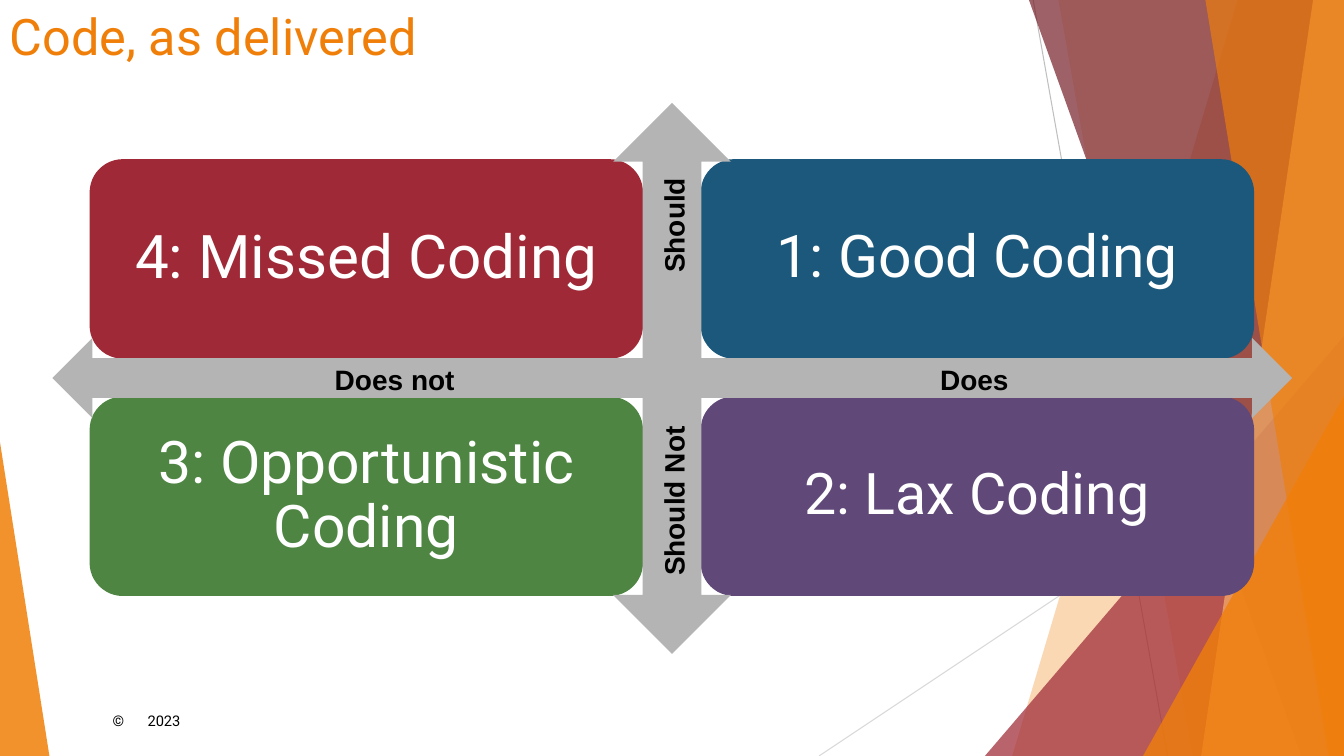
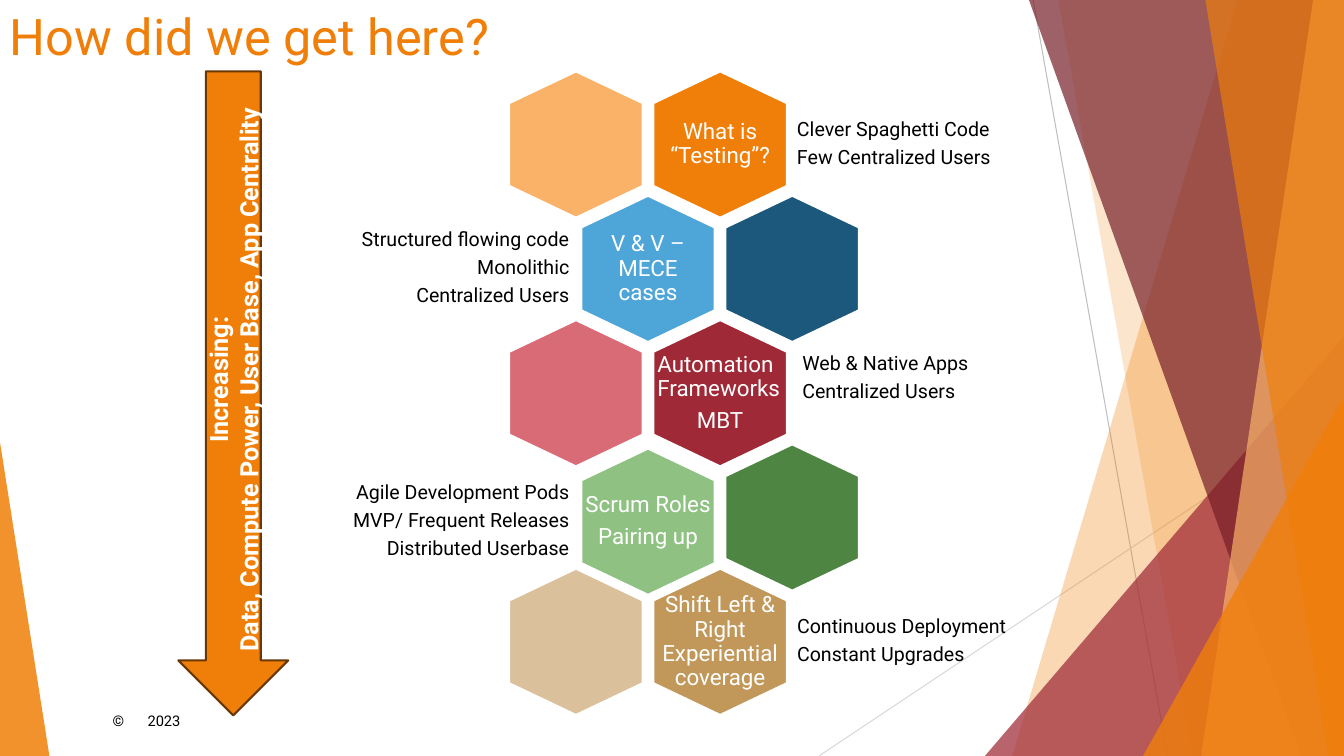
import lxml.etree
import pptx
import pptx.dml.color
import pptx.enum.shapes
import pptx.enum.text
import pptx.oxml.ns
import pptx.util

Pt = pptx.util.Pt
qn = pptx.oxml.ns.qn
SHAPE = pptx.enum.shapes.MSO_SHAPE
ALIGN = pptx.enum.text.PP_ALIGN
ANCHOR = pptx.enum.text.MSO_ANCHOR

COLORS = {
    "orange": "F07F09", "peach": "F9B268", "brown": "693804",
    "red": "9F2936", "rose": "D96B77", "maroon": "771F28",
    "navy": "1B587C", "sky": "4EA5D8", "purple": "604878",
    "green": "4E8542", "mint": "8EC182", "tan": "C19859", "sand": "DAC19B",
    "arrow": "B4B4B4", "rule": "BFBFBF", "pale_rule": "D9D9D9",
    "white": "FFFFFF", "black": "000000",
}
RGB = {name: pptx.dml.color.RGBColor.from_string(v) for name, v in COLORS.items()}
W, H = 960, 540


def paint(sp, fill, line=None, alpha=None):
    """Give a shape a flat fill, an optional outline and an optional opacity."""
    sp.shadow.inherit = False
    sp.fill.solid()
    sp.fill.fore_color.rgb = RGB[fill]
    if alpha:
        color = sp._element.spPr.find(qn("a:solidFill"))[0]
        lxml.etree.SubElement(color, qn("a:alpha")).set("val", str(alpha * 1000))
    if line:
        sp.line.color.rgb = RGB[line]
        sp.line.width = Pt(1.5)
    else:
        sp.line.fill.background()


def write(sp, lines, color, size, inset=(7.2, 3.6), font=None, para=None,
          anchor=ANCHOR.MIDDLE, vertical=False):
    """Fill a shape with paragraphs that share one format."""
    tf = sp.text_frame
    dx, dy = inset
    frame = {"word_wrap": True, "vertical_anchor": anchor,
             "margin_left": Pt(dx), "margin_right": Pt(dx),
             "margin_top": Pt(dy), "margin_bottom": Pt(dy)}
    for key, value in frame.items():
        setattr(tf, key, value)
    if vertical:
        tf._txBody.bodyPr.set("vert", "vert270")
    for i, line in enumerate(lines):
        p = tf.paragraphs[0] if i == 0 else tf.add_paragraph()
        for key, value in {"alignment": ALIGN.CENTER, **(para or {})}.items():
            setattr(p, key, value)
        r = p.add_run()
        r.text = line
        for key, value in {"name": "Roboto", "size": Pt(size), **(font or {})}.items():
            setattr(r.font, key, value)
        r.font.color.rgb = RGB[color]


prs = pptx.Presentation()
prs.slide_width, prs.slide_height = Pt(W), Pt(H)

# Backdrop: rules, then bands (top x, bottom x) and triangles (box, apex)
RULES = [(738, 0, 834, H, "rule"), (W, 290, 585, H, "pale_rule")]
BACKDROP = [
    ("orange", 30, (884, 723)),
    ("orange", 20, (756, 852)),
    ("red", 72, (703.5, 240, 256.5, 300, 1)),
    ("maroon", 70, (735, 929.5)),
    ("peach", 70, (938, 858)),
    ("orange", 65, (861, 949)),
    ("orange", 80, (816.5, 283, 143.5, 257, 1)),
    ("orange", 85, (0, 316, 35.3, 224, 0)),
]

# Slides with everything they share
slides = []
for title in ("Code, as delivered", "How did we get here?"):
    s = prs.slides.add_slide(prs.slide_layouts[6])
    slides.append(s)
    for *ends, color in RULES:
        cn = s.shapes.add_connector(pptx.enum.shapes.MSO_CONNECTOR.STRAIGHT,
                                    *[Pt(v) for v in ends])
        cn.line.color.rgb = RGB[color]
        cn.line.width = Pt(0.75)
        lxml.etree.SubElement(cn._element.spPr, qn("a:effectLst"))
    for color, alpha, geometry in BACKDROP:
        if len(geometry) == 2:
            top, bottom = geometry
            fb = s.shapes.build_freeform(Pt(top), 0)
            fb.add_line_segments([(Pt(x), Pt(y)) for x, y in
                                  ((W, 0), (W, H), (bottom, H))])
            sp = fb.convert_to_shape()
        else:
            *box, apex = geometry
            sp = s.shapes.add_shape(SHAPE.ISOSCELES_TRIANGLE, *[Pt(v) for v in box])
            sp.adjustments[0] = apex
        paint(sp, color, alpha=alpha)

    # Footer
    sp = s.shapes.add_textbox(Pt(73.4), Pt(504.7), Pt(72), Pt(21))
    write(sp, ["©\t2023"], "black", 10.5, para={"alignment": ALIGN.LEFT},
          anchor=ANCHOR.TOP)
    tabs = lxml.etree.SubElement(sp.text_frame.paragraphs[0]._p.get_or_add_pPr(),
                                 qn("a:tabLst"))
    tab = lxml.etree.SubElement(tabs, qn("a:tab"))
    tab.set("pos", str(Pt(25)))
    tab.set("algn", "l")

    # Title
    sp = s.shapes.add_textbox(0, 0, Pt(828), Pt(104))
    write(sp, [title], "orange", 36, para={"alignment": ALIGN.LEFT},
          anchor=ANCHOR.TOP)

# Slide 1: quadrant cards
s = slides[0]
CARDS = [
    (0, 0, "red", "4: Missed Coding", 43),
    (1, 0, "navy", "1: Good Coding", 42),
    (0, 1, "green", "3: Opportunistic Coding", 42),
    (1, 1, "purple", "2: Lax Coding", 41),
]
for col, row, color, text, size in CARDS:
    sp = s.shapes.add_shape(SHAPE.ROUNDED_RECTANGLE, Pt(64 + 436.5 * col),
                            Pt(113.7 + 169.5 * row), Pt(395.3), Pt(142.5))
    paint(sp, color)
    write(sp, [text], "white", size, inset=(20, 20),
          para={"line_spacing": 0.9, "space_after": Pt(0.35 * size)})

# Axis arrows
for kind, box in ((SHAPE.LEFT_RIGHT_ARROW, (37.5, 241.5, 885.5, 57)),
                  (SHAPE.UP_DOWN_ARROW, (438, 73.5, 84, 393.5))):
    sp = s.shapes.add_shape(kind, *[Pt(v) for v in box])
    paint(sp, "arrow")

# Axis labels: centre, text, vertical
for cx, cy, text, vertical in ((282, 271, "Does not", False),
                               (696, 271, "Does", False),
                               (481, 161, "Should", True),
                               (481, 358, "Should Not", True)):
    w, h = (30, 130) if vertical else (130, 30)
    sp = s.shapes.add_textbox(Pt(cx - w / 2), Pt(cy - h / 2), Pt(w), Pt(h))
    write(sp, [text], "black", 20, inset=(0, 0), vertical=vertical,
          font={"name": "Arial", "bold": True})

# Slide 2: honeycomb (column, row, drop, colour, text, insets)
s = slides[1]
HEX_W, HEX_H, SHOULDER = 95.4, 104.5, 22.7
HEXES = [
    (2, 0, 0, "orange", ["What is “Testing”?"], (8.6, 21.6)),
    (0, 0, 0, "peach", [], None),
    (1, 1, 0, "sky", ["V & V – MECE cases"], (19.4, 21.6)),
    (3, 1, 0, "navy", [], None),
    (2, 2, 0, "red", ["Automation Frameworks", "MBT"], (2.9, 21.6)),
    (0, 2, 0, "rose", [], None),
    (1, 3, 3, "mint", ["Scrum Roles", "Pairing up"], (2.9, 21.6)),
    (3, 3, 0, "green", [], None),
    (2, 4, 0, "tan", ["Shift Left & Right", "Experiential coverage"], (2.9, 5.8)),
    (0, 4, 0, "sand", [], None),
]
for col, row, drop, color, lines, inset in HEXES:
    x, y = 363.7 + 51.5 * col, 51 + 88.8 * row + drop
    right, mid, bottom = x + HEX_W, x + HEX_W / 2, y + HEX_H
    fb = s.shapes.build_freeform(Pt(mid), Pt(y))
    fb.add_line_segments([(Pt(px), Pt(py)) for px, py in (
        (right, y + SHOULDER), (right, bottom - SHOULDER), (mid, bottom),
        (x, bottom - SHOULDER), (x, y + SHOULDER))])
    sp = fb.convert_to_shape()
    paint(sp, color, line="white")
    if lines:
        gap = 0 if color == "tan" else 5.6
        write(sp, lines, "white", 16, inset=inset,
              para={"line_spacing": 0.9, "space_after": Pt(gap)})
    if color == "red":
        sp.text_frame.paragraphs[0].alignment = ALIGN.LEFT

# Captions beside the honeycomb
CAPTIONS = [
    (565, 72, 160, ALIGN.LEFT, ["Clever Spaghetti Code", "Few Centralized Users"]),
    (218, 160, 193, ALIGN.RIGHT,
     ["Structured flowing code", "Monolithic", "Centralized Users"]),
    (568.8, 238.5, 160, ALIGN.LEFT, ["Web & Native Apps", "Centralized Users"]),
    (218, 341.3, 193, ALIGN.RIGHT,
     ["Agile Development Pods", "MVP/ Frequent Releases", "Distributed Userbase"]),
    (565, 427, 176, ALIGN.LEFT, ["Continuous Deployment", "Constant Upgrades"]),
]
for x, y, w, align, lines in CAPTIONS:
    sp = s.shapes.add_textbox(Pt(x), Pt(y), Pt(w), Pt(62.6))
    write(sp, lines, "black", 14, inset=(4.3, 4.3),
          para={"alignment": align, "line_spacing": 0.9, "space_after": Pt(4.9)})

# Trend arrow
sp = s.shapes.add_shape(SHAPE.DOWN_ARROW, Pt(127.4), Pt(51), Pt(78.5), Pt(460))
paint(sp, "orange", line="brown")
write(sp, ["Increasing:", "Data, Compute Power, User Base, App Centrality"],
      "white", 18, font={"bold": True}, vertical=True)

prs.save("out.pptx")
